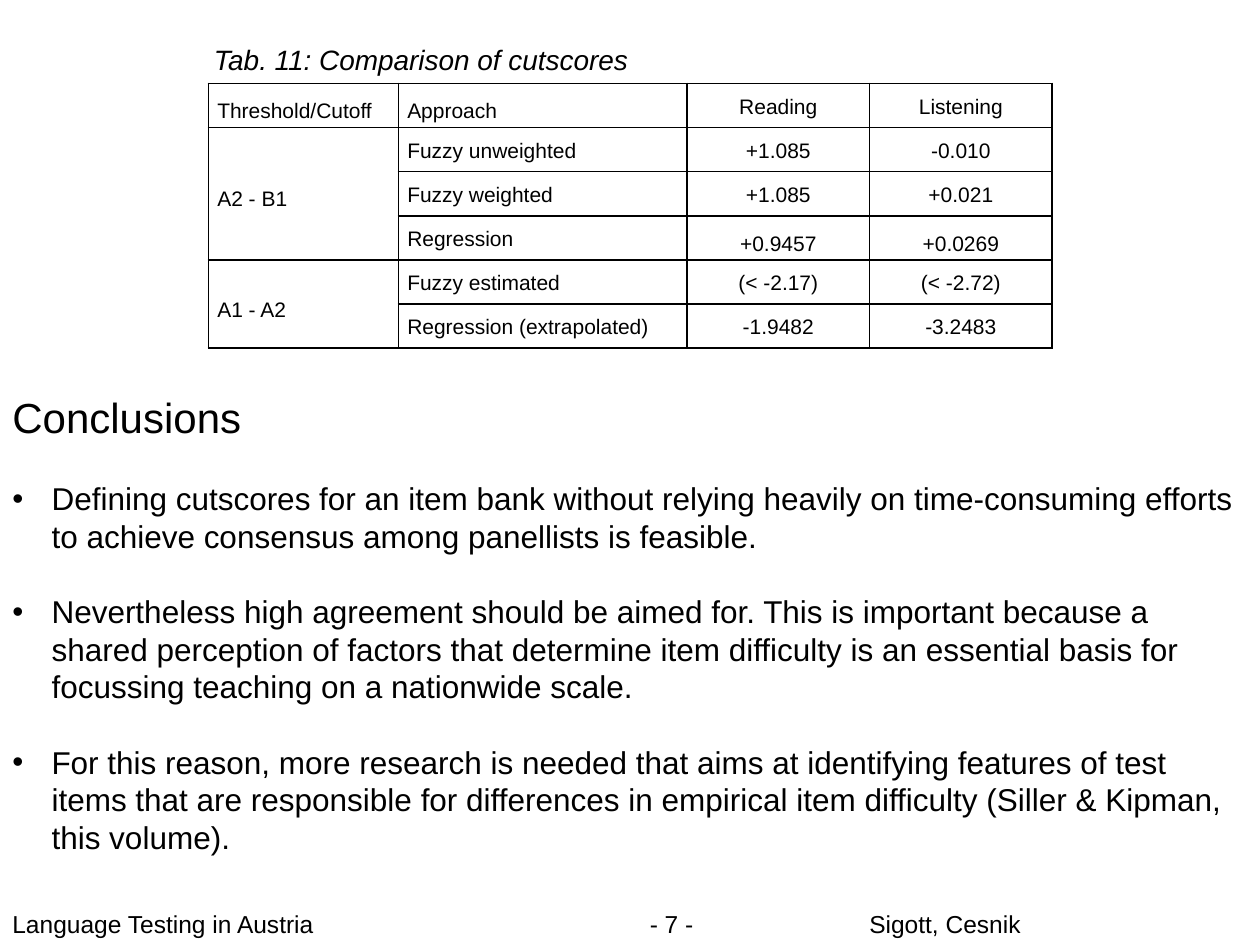
"""Build the slide with the cutscore comparison table and the conclusions."""
from lxml.etree import SubElement
from pptx import Presentation
from pptx.dml.color import RGBColor
from pptx.enum.text import MSO_ANCHOR, PP_ALIGN
from pptx.oxml.ns import qn
from pptx.util import Cm, Pt

BLACK = "000000"


def style(paragraph, size, align=PP_ALIGN.LEFT, italic=False):
    paragraph.alignment = align
    paragraph.font.name = "Arial"
    paragraph.font.size = Pt(size)
    paragraph.font.italic = italic
    paragraph.font.color.rgb = RGBColor.from_string(BLACK)


def add_text(left, top, width, height, text, size, align=PP_ALIGN.LEFT, italic=False):
    box = page.shapes.add_textbox(Cm(left), Cm(top), Cm(width), Cm(height))
    box.text_frame.word_wrap = True
    paragraph = box.text_frame.paragraphs[0]
    paragraph.text = text
    style(paragraph, size, align, italic)
    return box.text_frame


deck = Presentation()
deck.slide_width, deck.slide_height = Cm(25.4), Cm(19.05)
page = deck.slides.add_slide(deck.slide_layouts[6])

add_text(4.06, 0.73, 15, 0.9, "Tab. 11: Comparison of cutscores", 16, italic=True)

rows = [
    ["Threshold/Cutoff", "Approach", "Reading", "Listening"],
    ["A2 - B1", "Fuzzy unweighted", "+1.085", "‑0.010"],
    ["", "Fuzzy weighted", "+1.085", "+0.021"],
    ["", "Regression", "+0.9457", "+0.0269"],
    ["A1 - A2", "Fuzzy estimated", "(< ‑2.17)", "(< ‑2.72)"],
    ["", "Regression (extrapolated)", "-1.9482", "-3.2483"],
]
middle_cells = {(0, 0), (0, 1), (1, 0), (4, 0), (3, 2), (3, 3)}
widths = [3.83, 5.82, 3.68, 3.68]
row_height = 0.89
table = page.shapes.add_table(
    len(rows), len(widths), Cm(4.2), Cm(1.68), Cm(sum(widths)), Cm(row_height * len(rows))
).table
table.first_row = table.horz_banding = False
for column, width in zip(table.columns, widths):
    column.width = Cm(width)
for row_index, row in enumerate(rows):
    table.rows[row_index].height = Cm(row_height)
    for column_index, text in enumerate(row):
        cell = table.cell(row_index, column_index)
        cell.margin_left = cell.margin_right = Cm(0.18)
        cell.margin_top = cell.margin_bottom = 0
        if (row_index, column_index) in middle_cells:
            cell.vertical_anchor = MSO_ANCHOR.MIDDLE
        properties = cell._tc.get_or_add_tcPr()
        for side in ("a:lnL", "a:lnR", "a:lnT", "a:lnB"):
            line = SubElement(properties, qn(side), w=str(Pt(1)))
            SubElement(SubElement(line, qn("a:solidFill")), qn("a:srgbClr"), val=BLACK)
        cell.fill.background()
        paragraph = cell.text_frame.paragraphs[0]
        paragraph.text = text
        paragraph.line_spacing = 1.5
        style(paragraph, 12, PP_ALIGN.CENTER if column_index > 1 else PP_ALIGN.LEFT)
for first, last in ((1, 3), (4, 5)):
    table.cell(first, 0).merge(table.cell(last, 0))

conclusions = [
    "Defining cutscores for an item bank without relying heavily on time-consuming efforts "
    "to achieve consensus among panellists is feasible.",
    "Nevertheless high agreement should be aimed for. This is important because a shared "
    "perception of factors that determine item difficulty is an essential basis for "
    "focussing teaching on a nationwide scale.",
    "For this reason, more research is needed that aims at identifying features of test "
    "items that are responsible for differences in empirical item difficulty "
    "(Siller & Kipman, this volume).",
]
frame = add_text(0, 7.77, 25.4, 9.75, "Conclusions", 24)
for conclusion in conclusions:
    paragraph = frame.add_paragraph()
    paragraph.text = conclusion
    paragraph.line_spacing = paragraph.space_before = Pt(21.5)
    properties = paragraph._p.get_or_add_pPr()
    properties.set("marL", str(Cm(0.79)))
    properties.set("indent", str(-Cm(0.79)))
    SubElement(properties, qn("a:buFont"), typeface="Arial")
    SubElement(properties, qn("a:buChar"), char="•")
    style(paragraph, 18)

footers = [
    (0, 12.07, "Language Testing in Austria", PP_ALIGN.LEFT),
    (12.27, 2.54, "- 7 -", PP_ALIGN.CENTER),
    (16.51, 4.32, "Sigott, Cesnik", PP_ALIGN.RIGHT),
]
for left, width, text, align in footers:
    add_text(left, 18.21, width, 0.84, text, 14, align)

deck.save("out.pptx")
